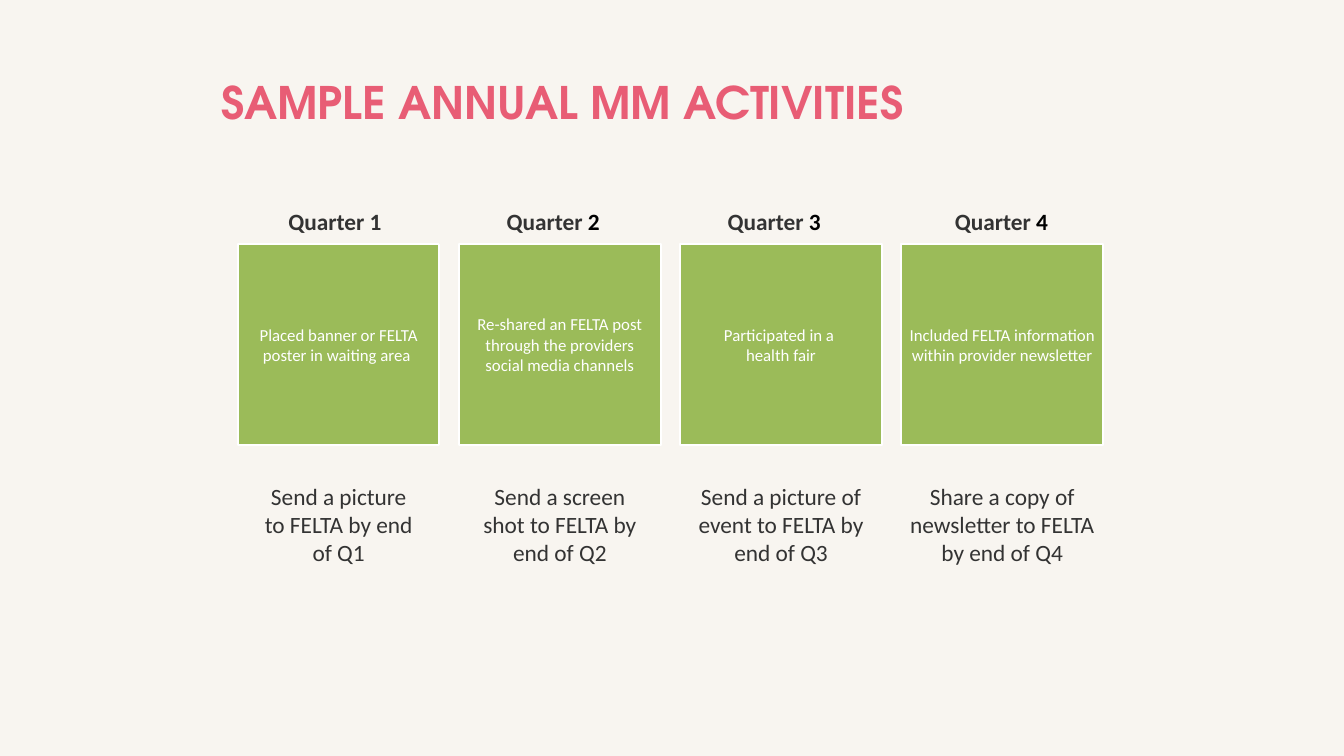
"""Build the slide of sample quarterly activities."""
from pptx import Presentation
from pptx.dml.color import RGBColor
from pptx.enum.shapes import MSO_SHAPE
from pptx.enum.text import MSO_ANCHOR, PP_ALIGN
from pptx.util import Cm, Pt

RECTANGLE = MSO_SHAPE.RECTANGLE
MIDDLE = MSO_ANCHOR.MIDDLE
LEFT, CENTER = PP_ALIGN.LEFT, PP_ALIGN.CENTER


def color(value):
    return RGBColor.from_string(value)


def add_run(paragraph, text, size, hex_color, bold=False, font="Calibri"):
    run = paragraph.add_run()
    run.text = text
    run.font.name = font
    run.font.size = Pt(size)
    run.font.bold = bold
    run.font.color.rgb = color(hex_color)


prs = Presentation()
prs.slide_width, prs.slide_height = Cm(50.8), Cm(28.58)
slide = prs.slides.add_slide(prs.slide_layouts[5])
slide.background.fill.solid()
slide.background.fill.fore_color.rgb = color("F8F5F0")

title = slide.shapes.title
title.left, title.top, title.width, title.height = Cm(8.13), Cm(2.02), Cm(32.66), Cm(3.63)
title.text_frame.vertical_anchor = MIDDLE
heading = title.text_frame.paragraphs[0]
heading.alignment = LEFT
add_run(heading, "SAMPLE ANNUAL MM ACTIVITIES", 48, "E85D75", True, "TeX Gyre Adventor")

quarters = [
    (10.65, [("Quarter 1", "333333")],
     ["Placed banner or FELTA poster in waiting area "],
     "Send a picture to FELTA by end of Q1", 6.25),
    (18.9, [("Quarter", "333333"), (" 2", "000000")],
     ["Re-shared an FELTA post through the providers social media channels"],
     "Send a screen shot to FELTA by end of Q2", 6.6),
    (27.25, [("Quarter", "333333"), (" 3", "000000")],
     ["Participated in a ", "health fair"],
     "Send a picture of event to FELTA by end of Q3", 7.21),
    (35.84, [("Quarter", "333333"), (" 4", "000000")],
     ["Included FELTA information within provider newsletter"],
     "Share a copy of newsletter to FELTA by end of Q4", 8.26),
]
first_left, pitch, side = 8.99, 8.36, 7.62

for index, (label_left, label_parts, activity_lines, proof, proof_width) in enumerate(quarters):
    left = first_left + index * pitch
    center = left + side / 2

    card = slide.shapes.add_shape(RECTANGLE, Cm(left), Cm(9.21), Cm(side), Cm(side))
    card.shadow.inherit = False
    card.fill.solid()
    card.fill.fore_color.rgb = color("9BBB59")
    card.line.color.rgb = color("FFFFFF")
    card.line.width = Pt(2)
    activity = card.text_frame
    activity.word_wrap = True
    activity.vertical_anchor = MIDDLE
    for number, line in enumerate(activity_lines):
        paragraph = activity.add_paragraph() if number else activity.paragraphs[0]
        paragraph.alignment = CENTER
        add_run(paragraph, line, 18, "FFFFFF")

    label = slide.shapes.add_textbox(Cm(label_left), Cm(7.7), Cm(4.52), Cm(1.32))
    label.text_frame.word_wrap = True
    for text, hex_color in label_parts:
        add_run(label.text_frame.paragraphs[0], text, 25, hex_color, True)

    request = slide.shapes.add_textbox(
        Cm(center - proof_width / 2), Cm(18.1), Cm(proof_width), Cm(3.45))
    request.text_frame.word_wrap = True
    request.text_frame.paragraphs[0].alignment = CENTER
    add_run(request.text_frame.paragraphs[0], proof, 25, "333333")

prs.save("out.pptx")
